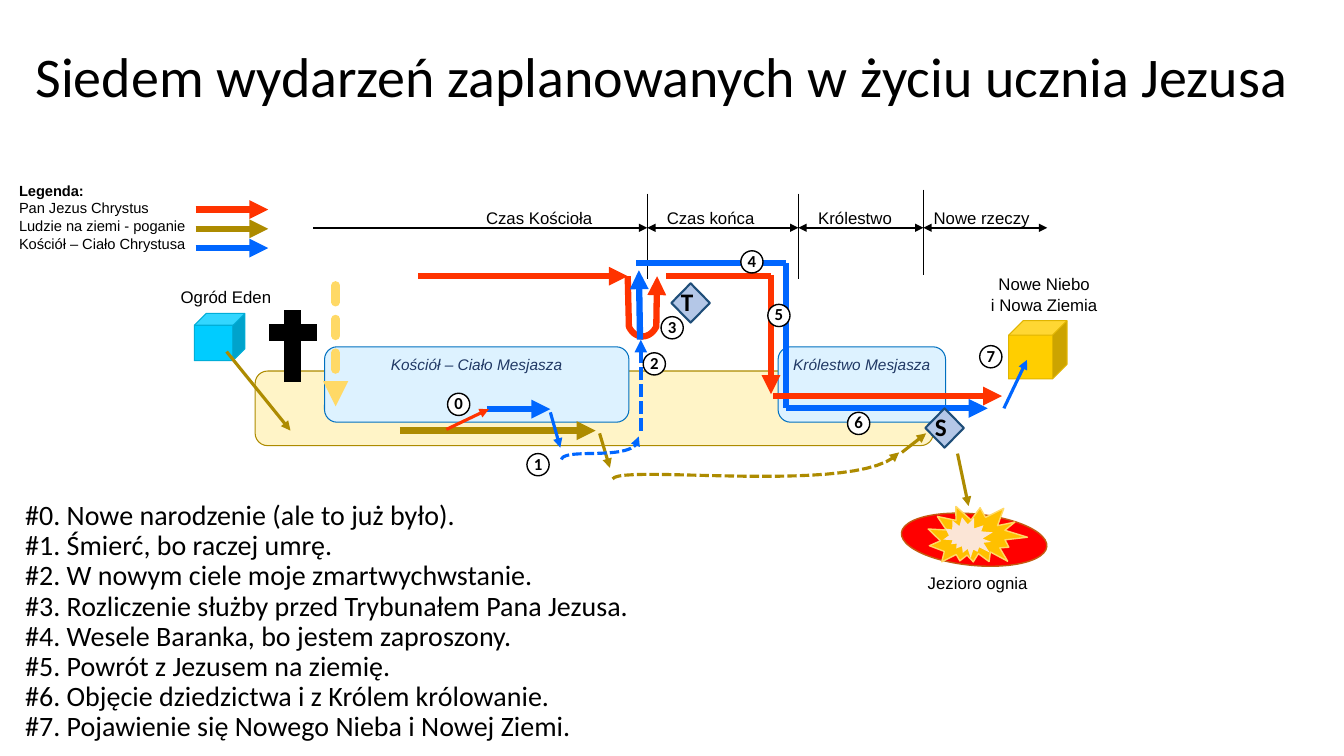
from collections import namedtuple

from lxml.etree import SubElement
from pptx import Presentation
from pptx.dml.color import RGBColor
from pptx.enum.dml import MSO_LINE
from pptx.enum.shapes import MSO_CONNECTOR, MSO_SHAPE as SHAPE
from pptx.enum.text import MSO_ANCHOR as ANCHOR, MSO_AUTO_SIZE as AUTO, PP_ALIGN as ALIGN
from pptx.oxml.ns import qn
from pptx.util import Cm, Pt

Box = namedtuple("Box", "left top width height")

COLORS = {
    "black": "000000", "white": "FFFFFF", "navy": "203864",
    "christ": "FF3300", "people": "AD8B00", "church": "0066FF", "spirit": "FFD966",
    "earth": "FFF4C7", "sky": "DDF2FF", "sky_edge": "0070C0",
    "diamond": "B4C7E7", "diamond_edge": "1F4E79",
    "eden": "00CCFF", "eden_edge": "00AED8", "new": "FFCE00", "new_edge": "E0B400",
    "lake": "FF0000", "lake_edge": "C55A11", "flame": "FFC000", "core": "FBE5D6",
}
EVENTS = [
    "#0. Nowe narodzenie (ale to już było).",
    "#1. Śmierć, bo raczej umrę.",
    "#2. W nowym ciele moje zmartwychwstanie.",
    "#3. Rozliczenie służby przed Trybunałem Pana Jezusa.",
    "#4. Wesele Baranka, bo jestem zaproszony.",
    "#5. Powrót z Jezusem na ziemię.",
    "#6. Objęcie dziedzictwa i z Królem królowanie.",
    "#7. Pojawienie się Nowego Nieba i Nowej Ziemi.",
]


def color(name):
    return RGBColor.from_string(COLORS[name])


def move(shape, box):
    shape.left, shape.top, shape.width, shape.height = map(Cm, box)


def write(frame, lines, size, font="Arial", ink="black", bold=False, italic=False,
          align=ALIGN.LEFT, spacing=None):
    for index, line in enumerate(lines):
        para = frame.paragraphs[0] if index == 0 else frame.add_paragraph()
        para.alignment = align
        para.space_before = Pt(0)
        para.line_spacing = spacing
        span = para.add_run()
        span.text = line
        span.font.size = Pt(size)
        span.font.name = font
        span.font.bold = bold
        span.font.italic = italic
        span.font.color.rgb = color(ink)


def style_line(line, ink, width, dashed=False, head=False, tail=True):
    line.color.rgb = color(ink)
    line.width = Pt(width)
    if dashed:
        line.dash_style = MSO_LINE.SQUARE_DOT
    outline = line._get_or_add_ln()
    for tag, wanted in (("a:headEnd", head), ("a:tailEnd", tail)):
        if wanted:
            SubElement(outline, qn(tag), type="triangle")


def draw_line(shapes, box, start, end, ink, width, **ends):
    points = [Cm(v) for x, y in (start, end) for v in (box.left + x, box.top + y)]
    link = shapes.add_connector(MSO_CONNECTOR.STRAIGHT, *points)
    style_line(link.line, ink, width, **ends)
    SubElement(link._element.spPr, qn("a:effectLst"))
    return link


def bezier(a, b, c, d, steps=24):
    def blend(t, axis):
        u = 1 - t
        return u**3 * a[axis] + 3*u*u*t * b[axis] + 3*u*t*t * c[axis] + t**3 * d[axis]
    return [(blend(i / steps, 0), blend(i / steps, 1)) for i in range(steps + 1)]


def draw_curve(shapes, box, points, ink, width, dashed=False):
    places = [(Cm(box.left + x), Cm(box.top + y)) for x, y in points]
    builder = shapes.build_freeform(*places[0])
    builder.add_line_segments(places[1:], close=False)
    curve = builder.convert_to_shape()
    curve.fill.background()
    curve.shadow.inherit = False
    style_line(curve.line, ink, width, dashed)


def draw_shape(shapes, kind, box, fill, edge=None, width=0.75, turn=0):
    shape = shapes.add_shape(kind, *map(Cm, box))
    shape.shadow.inherit = False
    shape.fill.solid()
    shape.fill.fore_color.rgb = color(fill)
    if edge:
        shape.line.color.rgb = color(edge)
        shape.line.width = Pt(width)
    else:
        shape.line.fill.background()
    shape.rotation = turn
    return shape


def add_label(shapes, center, top, *lines):
    frame = shapes.add_textbox(*map(Cm, (center - 1.83, top, 3.66, 0.15 + 0.51 * len(lines)))).text_frame
    frame.word_wrap = True
    frame.vertical_anchor = ANCHOR.MIDDLE
    frame.margin_left = frame.margin_right = frame.margin_top = frame.margin_bottom = Cm(0.08)
    write(frame, lines, 12, align=ALIGN.CENTER)


def add_title(page, box):
    title = page.shapes.title
    move(title, box)
    title.text_frame.auto_size = AUTO.NONE
    title.text_frame.vertical_anchor = ANCHOR.MIDDLE
    write(title.text_frame, ["Siedem wydarzeń zaplanowanych w życiu ucznia Jezusa"], 40, "Calibri", spacing=0.9)


def add_events(page, box):
    body = page.placeholders[1]
    move(body, box)
    body.text_frame.auto_size = AUTO.NONE
    write(body.text_frame, EVENTS, 20, "Calibri", spacing=0.9)
    for para in body.text_frame.paragraphs:
        props = para._p.get_or_add_pPr()
        props.set("marL", "0")
        props.set("indent", "0")
        SubElement(props, qn("a:buNone"))


def add_legend(page, box):
    shapes = page.shapes.add_group_shape().shapes
    for row, ink in enumerate(("christ", "people", "church")):
        y = 0.83 + 0.485 * row
        draw_line(shapes, box, (4.7, y), (6.53, y), ink, 4.5)
    frame = shapes.add_textbox(*map(Cm, box)).text_frame
    frame.word_wrap = True
    write(frame, ["Legenda:"], 10.5, bold=True)
    for entry in ("Pan Jezus Chrystus", "Ludzie na ziemi - poganie", "Kościół – Ciało Chrystusa"):
        para = frame.add_paragraph()
        span = para.add_run()
        span.text = entry
        span.font.size = Pt(10.5)
        span.font.name = "Arial"
        span.font.color.rgb = color("black")


def add_timeline(page, box):
    shapes = page.shapes
    axis = 0.86
    limits = [0, 8.41, 12.22, 15.37, box.width]
    ages = [("Czas Kościoła", 5.69), ("Czas końca", 10.01), ("Królestwo", 13.65), ("Nowe rzeczy", 16.84)]
    for index, (age, center) in enumerate(ages):
        start, end = limits[index:index + 2]
        draw_line(shapes, box, (start, axis), (end, axis), "black", 1.5, head=index > 0)
        if index:
            top = -0.1 if index == 3 else 0
            draw_line(shapes, box, (start, top), (start, top + box.height), "black", 0.5, tail=False)
        add_label(shapes, box.left + center, box.top + 0.28, age)


def add_ages(page, box):
    bands = [
        (0.08, 3, 17.09, 1.88, "earth", "people", None),
        (1.83, 2.39, 7.67, 1.9, "sky", "sky_edge", "Kościół – Ciało Mesjasza"),
        (13.26, 2.39, 4.22, 1.9, "sky", "sky_edge", "Królestwo Mesjasza"),
    ]
    for x, y, width, height, fill, edge, name in bands:
        place = Box(box.left + x, box.top + y, width, height)
        band = draw_shape(page.shapes, SHAPE.ROUNDED_RECTANGLE, place, fill, edge)
        if name:
            band.text_frame.word_wrap = False
            band.text_frame.vertical_anchor = ANCHOR.TOP
            write(band.text_frame, [name], 11, ink="navy", italic=True, align=ALIGN.CENTER)


def add_paths(page, box):
    shapes = page.shapes
    thick = [
        ("people", (3.73, 4.5), (8.66, 4.5), True), ("christ", (4.19, 0.61), (9.47, 0.61), True),
        ("church", (5.92, 3.96), (7.52, 3.96), True), ("church", (9.68, 0.28), (13.46, 0.28), False),
        ("christ", (13.08, 0.58), (13.08, 3.58), True), ("christ", (10.44, 0.61), (13.08, 0.61), False),
        ("church", (13.46, 0.28), (13.46, 3.94), False), ("christ", (13.13, 3.63), (18.9, 3.63), True),
        ("church", (13.46, 3.94), (18.54, 3.94), True), ("church", (9.78, 2.21), (9.75, 0.46), True),
    ]
    thin = [
        ("people", (16.38, 5.05), (16.99, 4.57)), ("people", (8.76, 4.57), (9.02, 5.44)),
        ("church", (7.52, 4.04), (7.77, 4.93)), ("people", (17.78, 5.08), (18.06, 6.4)),
        ("church", (18.95, 3.94), (19.53, 2.72)), ("christ", (4.9, 4.47), (5.97, 3.96)),
        ("people", (-0.64, 2.51), (0.97, 4.5)),
    ]
    turn = bezier((9.5, 1.88), (9.65, 2.21), (10.03, 2.21), (10.19, 1.88))
    draw_curve(shapes, box, [(9.47, 0.61), *turn, (10.21, 0.61)], "christ", 4.5)
    for ink, start, end, tail in thick:
        draw_line(shapes, box, start, end, ink, 4.5, tail=tail)
    for ink, start, end in thin:
        draw_line(shapes, box, start, end, ink, 2.25)
    death = bezier((7.8, 5.23), (7.87, 4.9), (9.78, 5.33), (9.75, 4.65))
    judgment = bezier((9.09, 5.72), (9.27, 5.33), (15.42, 6.15), (16.31, 5.05))
    draw_curve(shapes, box, death, "church", 2.25, dashed=True)
    draw_curve(shapes, box, judgment, "people", 2.25, dashed=True)
    draw_line(shapes, box, (9.8, 4.5), (9.8, 2.21), "church", 3, dashed=True)
    descent = draw_line(shapes, box, (2.11, 0.84), (2.11, 3.89), "spirit", 6, dashed=True)
    descent.line._get_or_add_ln().set("cap", "rnd")


def add_markers(page, box):
    for letter, x, y in (("T", 10.57, 0.79), ("S", 16.97, 3.94)):
        place = Box(box.left + x, box.top + y, 0.97, 0.99)
        frame = draw_shape(page.shapes, SHAPE.DIAMOND, place, "diamond", "diamond_edge", 1.5).text_frame
        frame.margin_left = frame.margin_right = 0
        frame.margin_top = frame.margin_bottom = Cm(0.1)
        frame.vertical_anchor = ANCHOR.MIDDLE
        write(frame, [letter], 18, "Calibri", bold=True, spacing=0.9)
    spots = [(4.93, 3.56), (6.93, 5.08), (9.86, 2.54), (10.31, 1.63),
             (12.32, -0.03), (13, 1.32), (15.01, 4.04), (18.34, 2.36)]
    for number, (x, y) in enumerate(spots):
        place = Box(box.left + x, box.top + y, 0.56, 0.56)
        frame = draw_shape(page.shapes, SHAPE.OVAL, place, "white", "black", 1).text_frame
        frame.word_wrap = False
        frame.vertical_anchor = ANCHOR.MIDDLE
        write(frame, [str(number)], 12, "Calibri", bold=True, align=ALIGN.CENTER, spacing=0.9)


def add_world(page, box, name, *lines):
    draw_shape(page.shapes, SHAPE.CUBE, box, name, name + "_edge")
    add_label(page.shapes, box.left + box.width / 2 + 0.16, box.top - 0.23 - 0.51 * len(lines), *lines)


def add_cross(page, box):
    shapes = page.shapes.add_group_shape().shapes
    draw_line(shapes, box, (0, 0.58), (box.width, 0.58), "black", 12, tail=False)
    draw_line(shapes, box, (box.width / 2, box.height), (box.width / 2, 0), "black", 12, tail=False)


def add_lake(page, box):
    shapes = page.shapes.add_group_shape().shapes
    layers = [
        (SHAPE.FLOWCHART_CONNECTOR, 0, 0.3, 3.68, 1.3, "lake", "lake_edge", 5.4),
        (SHAPE.EXPLOSION2, 0.68, 0, 2.46, 1.73, "flame", "spirit", 16.2),
        (SHAPE.EXPLOSION2, 1.12, 0.33, 1.19, 1.14, "core", None, 56.2),
    ]
    for kind, x, y, width, height, fill, edge, turn in layers:
        draw_shape(shapes, kind, Box(box.left + x, box.top + y, width, height), fill, edge, 1, turn)
    add_label(page.shapes, box.left + 1.93, box.top + box.height, "Jezioro ognia")


def main():
    deck = Presentation()
    deck.slide_width, deck.slide_height = Cm(33.87), Cm(19.05)
    page = deck.slides.add_slide(deck.slide_layouts[1])
    diagram = Box(6.35, 6.35, 20, 6.4)
    add_title(page, Box(0.64, 1.02, 32.26, 1.98))
    add_ages(page, diagram)
    add_world(page, Box(4.9, 7.9, 1.27, 1.19), "eden", "Ogród Eden")
    add_world(page, Box(25.42, 8.08, 1.47, 1.47), "new", "Nowe Niebo", "i Nowa Ziemia")
    add_timeline(page, Box(7.9, 4.88, 18.49, 2.16))
    add_paths(page, diagram)
    add_markers(page, diagram)
    add_cross(page, Box(6.78, 7.8, 1.2, 1.83))
    add_lake(page, Box(22.71, 12.65, 3.68, 1.7))
    add_legend(page, Box(0.23, 4.45, 5.05, 2.06))
    add_events(page, Box(0.38, 12.5, 21.89, 6.3))
    deck.save("out.pptx")


if __name__ == "__main__":
    main()
